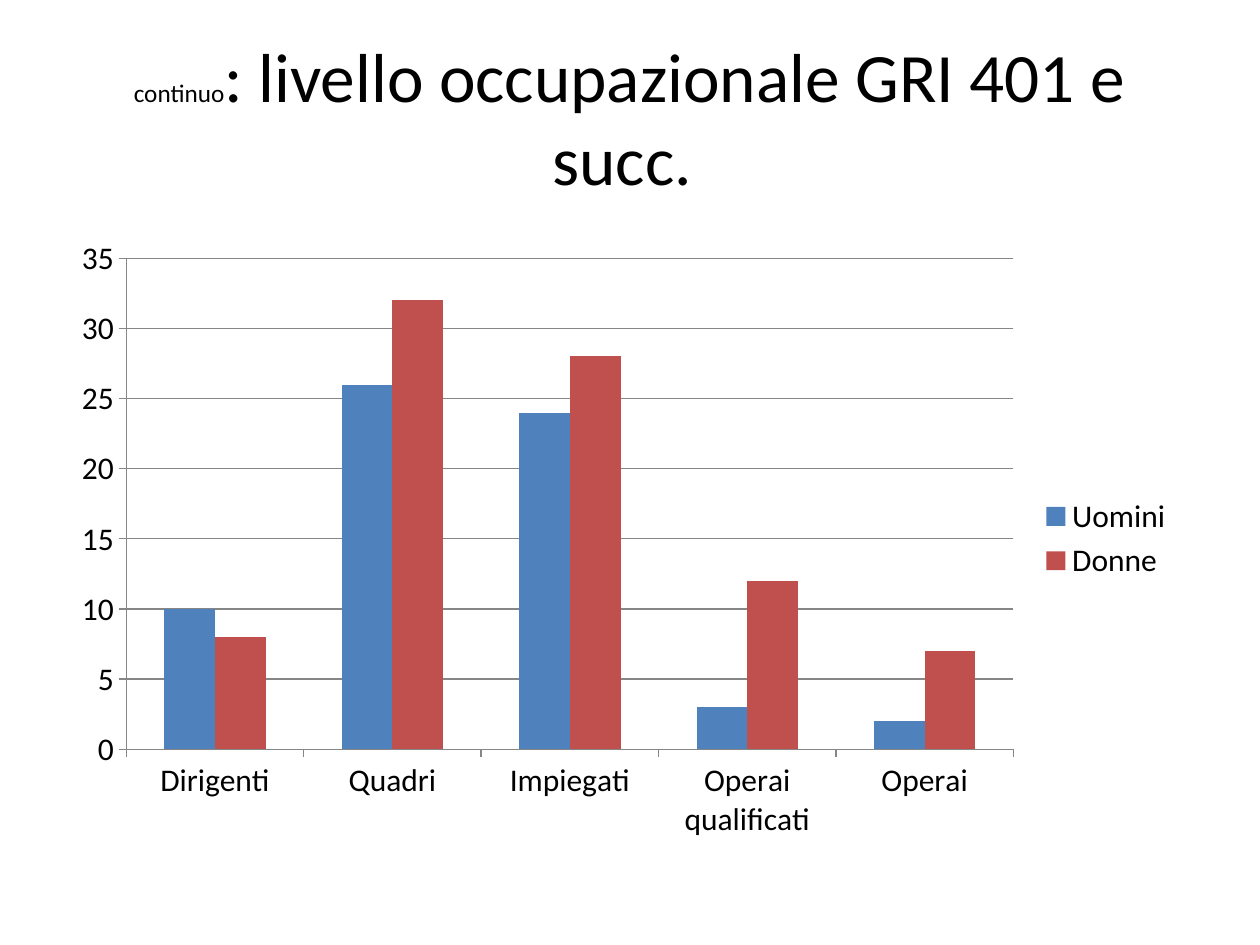
"""Build a slide with a clustered column chart of employment levels by gender."""
import pptx
import pptx.chart.data
import pptx.dml.color
import pptx.enum.chart
import pptx.enum.text
import pptx.util
from pptx.util import Inches

RGBColor = pptx.dml.color.RGBColor
BLACK = RGBColor(0x00, 0x00, 0x00)
GRAY = RGBColor(0x86, 0x86, 0x86)
BLUE = RGBColor(0x4F, 0x81, 0xBD)
RED = RGBColor(0xC0, 0x50, 0x4D)
FONT = "Calibri"

prs = pptx.Presentation()
prs.slide_width, prs.slide_height = Inches(10), Inches(7.5)
s = prs.slides.add_slide(prs.slide_layouts[6])

sp = s.shapes.add_textbox(Inches(0.5), Inches(0.3), Inches(9), Inches(1.25))
tf = sp.text_frame
tf.word_wrap = True
tf.vertical_anchor = pptx.enum.text.MSO_ANCHOR.MIDDLE
p = tf.paragraphs[0]
p.alignment = pptx.enum.text.PP_ALIGN.CENTER
for text, size in [("continuo", 14.4), (": livello occupazionale GRI 401 e succ. ", 39.6)]:
    r = p.add_run()
    r.text = text
    r.font.name = FONT
    r.font.size = pptx.util.Pt(size)
    r.font.color.rgb = BLACK

data = pptx.chart.data.CategoryChartData()
data.categories = ["Dirigenti", "Quadri", "Impiegati", "Operai qualificati", "Operai"]
data.add_series("Uomini ", [10, 26, 24, 3, 2])
data.add_series("Donne", [8, 32, 28, 12, 7])
chart = s.shapes.add_chart(
    pptx.enum.chart.XL_CHART_TYPE.COLUMN_CLUSTERED,
    Inches(0.47), Inches(1.8), Inches(9), Inches(4.95), data,
).chart
chart.has_title = False
chart.font.name = FONT
chart.font.size = pptx.util.Pt(18)
chart.font.color.rgb = BLACK
chart.has_legend = True
chart.legend.position = pptx.enum.chart.XL_LEGEND_POSITION.RIGHT
chart.legend.include_in_layout = False

plot = chart.plots[0]
plot.vary_by_categories = False
plot.gap_width = 150
plot.overlap = 0
for series, color in zip(plot.series, [BLUE, RED]):
    series.format.fill.solid()
    series.format.fill.fore_color.rgb = color

for axis in (chart.category_axis, chart.value_axis):
    axis.format.line.color.rgb = GRAY
    axis.major_tick_mark = pptx.enum.chart.XL_TICK_MARK.OUTSIDE
    axis.minor_tick_mark = pptx.enum.chart.XL_TICK_MARK.NONE
chart.value_axis.minimum_scale = 0
chart.value_axis.maximum_scale = 35
chart.value_axis.major_unit = 5
chart.value_axis.has_major_gridlines = True
chart.value_axis.major_gridlines.format.line.color.rgb = GRAY

prs.save("out.pptx")
